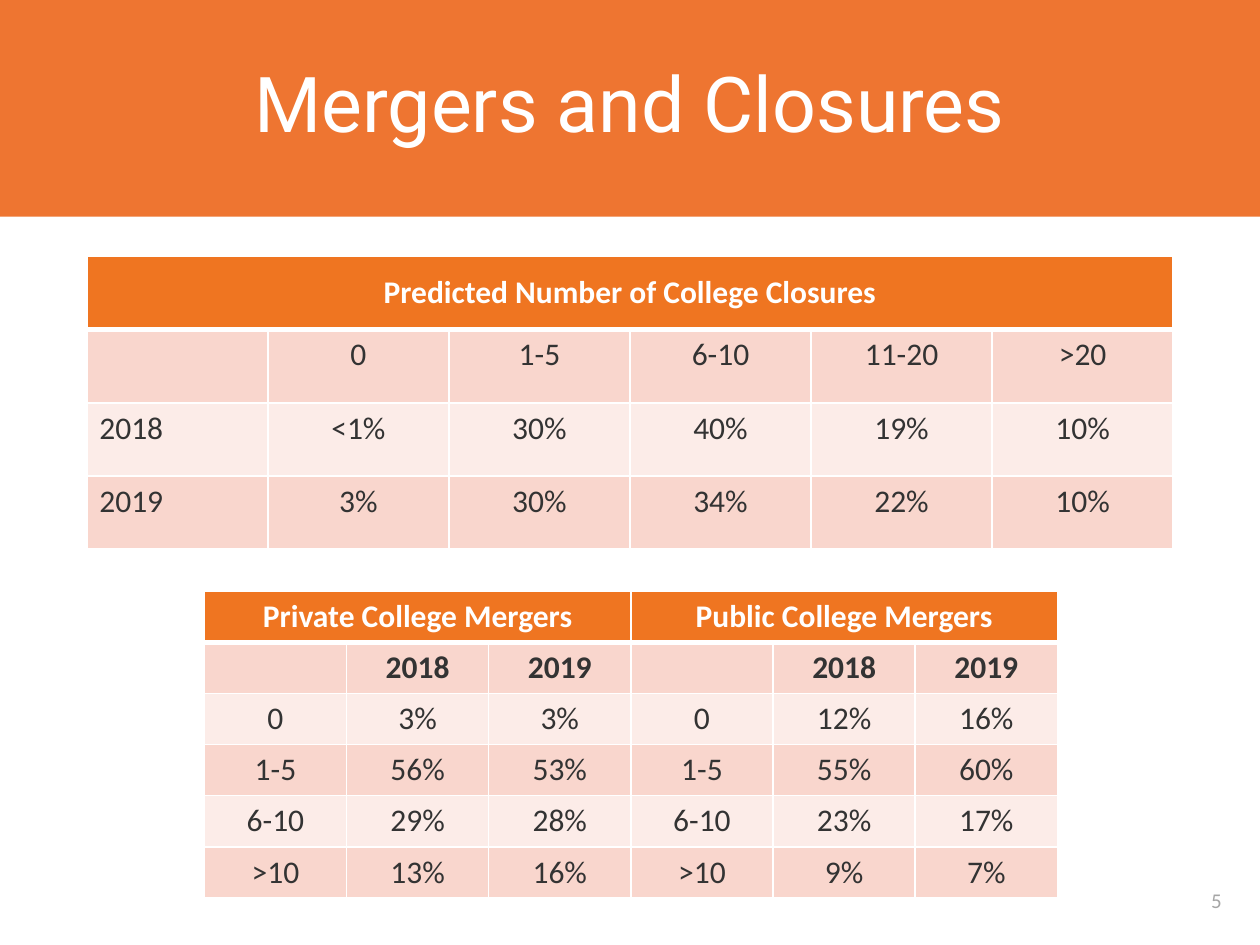
import dataclasses

import pptx
import pptx.dml.color
import pptx.enum.shapes
import pptx.enum.text
import pptx.oxml
import pptx.oxml.ns
import pptx.util

Cm = pptx.util.Cm
Pt = pptx.util.Pt
RGB = pptx.dml.color.RGBColor.from_string
Align = pptx.enum.text.PP_ALIGN
Anchor = pptx.enum.text.MSO_ANCHOR


@dataclasses.dataclass(frozen=True)
class Theme:
    banner: str = "EE7531"
    head: str = "EF7521"
    bands: tuple = ("F9D6CD", "FCECE8")
    white: str = "FFFFFF"
    ink: str = "333333"
    grey: str = "A6A6A6"
    sans: str = "Calibri"
    show: str = "Roboto"
    title: int = 44
    body: int = 18
    note: int = 12


THEME = Theme()


def put(obj, form):
    """Set each attribute named in form."""
    for key, val in form.items():
        setattr(obj, key, val)


def write(frame, text, size, color, face=THEME.sans, bold=False,
          align=Align.CENTER):
    """Write one formatted line in a text frame."""
    para = frame.paragraphs[0]
    para.alignment = align
    if text:
        run = para.add_run()
        run.text = text
        put(run.font, {"name": face, "size": Pt(size), "bold": bold})
        run.font.color.rgb = RGB(color)


def edge(cell, low):
    """Draw white borders; low is the width of the bottom one."""
    props = cell._tc.get_or_add_tcPr()
    space = pptx.oxml.ns.nsdecls("a")
    sides = {"lnL": 1, "lnR": 1, "lnT": 1, "lnB": low}
    for spot, (tag, wide) in enumerate(sides.items()):
        line = pptx.oxml.parse_xml(
            f'<a:{tag} {space} w="{Pt(wide)}"><a:solidFill>'
            f'<a:srgbClr val="{THEME.white}"/></a:solidFill></a:{tag}>')
        props.insert(spot, line)


def paint(cell, color, low=1):
    cell.fill.solid()
    cell.fill.fore_color.rgb = RGB(color)
    edge(cell, low)


def add_banner(slide, text):
    """Fill the top of the slide and set the title on it."""
    title = slide.shapes.title
    put(title, {"left": Cm(1.75), "top": Cm(0),
                "width": Cm(21.9), "height": Cm(4.35)})
    frame = title.text_frame
    put(frame, {"vertical_anchor": Anchor.MIDDLE, "word_wrap": True,
                "auto_size": pptx.enum.text.MSO_AUTO_SIZE.NONE})
    write(frame, text, THEME.title, THEME.white, THEME.show)
    frame.paragraphs[0].line_spacing = 0.9

    band = slide.shapes.add_shape(
        pptx.enum.shapes.MSO_SHAPE.RECTANGLE, Cm(-0.03), Cm(0), Cm(25.45), Cm(4.37))
    band.shadow.inherit = False
    band.fill.solid()
    band.fill.fore_color.rgb = RGB(THEME.banner)
    band.line.fill.background()
    title.element.addprevious(band.element)


def add_grid(slide, box, heads, rows, anchor=Anchor.TOP, bold=False,
             first=Align.CENTER):
    """Add a banded table whose heads share the columns equally."""
    wide = len(rows[0])
    left, top, width, height = box
    table = slide.shapes.add_table(
        len(rows) + 1, wide, Cm(left), Cm(top), Cm(width), Cm(height)).table
    for col in table.columns:
        col.width = Cm(width / wide)
    for row in table.rows:
        row.height = Cm(height / (len(rows) + 1))

    # Merged heads
    span = wide // len(heads)
    for col in range(wide):
        paint(table.cell(0, col), THEME.head, 3)
    for num, text in enumerate(heads):
        cell = table.cell(0, num * span)
        cell.merge(table.cell(0, (num + 1) * span - 1))
        cell.vertical_anchor = anchor
        write(cell.text_frame, text, THEME.body, THEME.white, bold=True)

    # Banded rows
    for num, row in enumerate(rows):
        for col, text in enumerate(row):
            cell = table.cell(num + 1, col)
            paint(cell, THEME.bands[num % 2])
            write(cell.text_frame, text, THEME.body, THEME.ink,
                  bold=bold and num == 0,
                  align=first if col == 0 else Align.CENTER)


def add_number(slide, text):
    box = slide.shapes.add_textbox(Cm(23.65), Cm(17.65), Cm(1.75), Cm(1))
    put(box.text_frame, {"word_wrap": True, "vertical_anchor": Anchor.MIDDLE})
    write(box.text_frame, text, THEME.note, THEME.grey)


def main():
    deck = pptx.Presentation()
    put(deck, {"slide_width": Cm(25.4), "slide_height": Cm(19.05)})
    slide = deck.slides.add_slide(deck.slide_layouts[5])

    add_banner(slide, "Mergers and Closures")
    add_number(slide, "5")
    add_grid(slide, (4.12, 11.92, 17.2, 6.18),
             ["Private College Mergers", "Public College Mergers"],
             [["", "2018", "2019", "", "2018", "2019"],
              ["0", "3%", "3%", "0", "12%", "16%"],
              ["1-5", "56%", "53%", "1-5", "55%", "60%"],
              ["6-10", "29%", "28%", "6-10", "23%", "17%"],
              [">10", "13%", "16%", ">10", "9%", "7%"]],
             bold=True)
    add_grid(slide, (1.75, 5.17, 21.9, 5.9),
             ["Predicted Number of College Closures"],
             [["", "0", "1-5", "6-10", "11-20", ">20"],
              ["2018", "<1%", "30%", "40%", "19%", "10%"],
              ["2019", "3%", "30%", "34%", "22%", "10%"]],
             anchor=Anchor.MIDDLE, first=Align.LEFT)
    deck.save("out.pptx")


if __name__ == "__main__":
    main()
